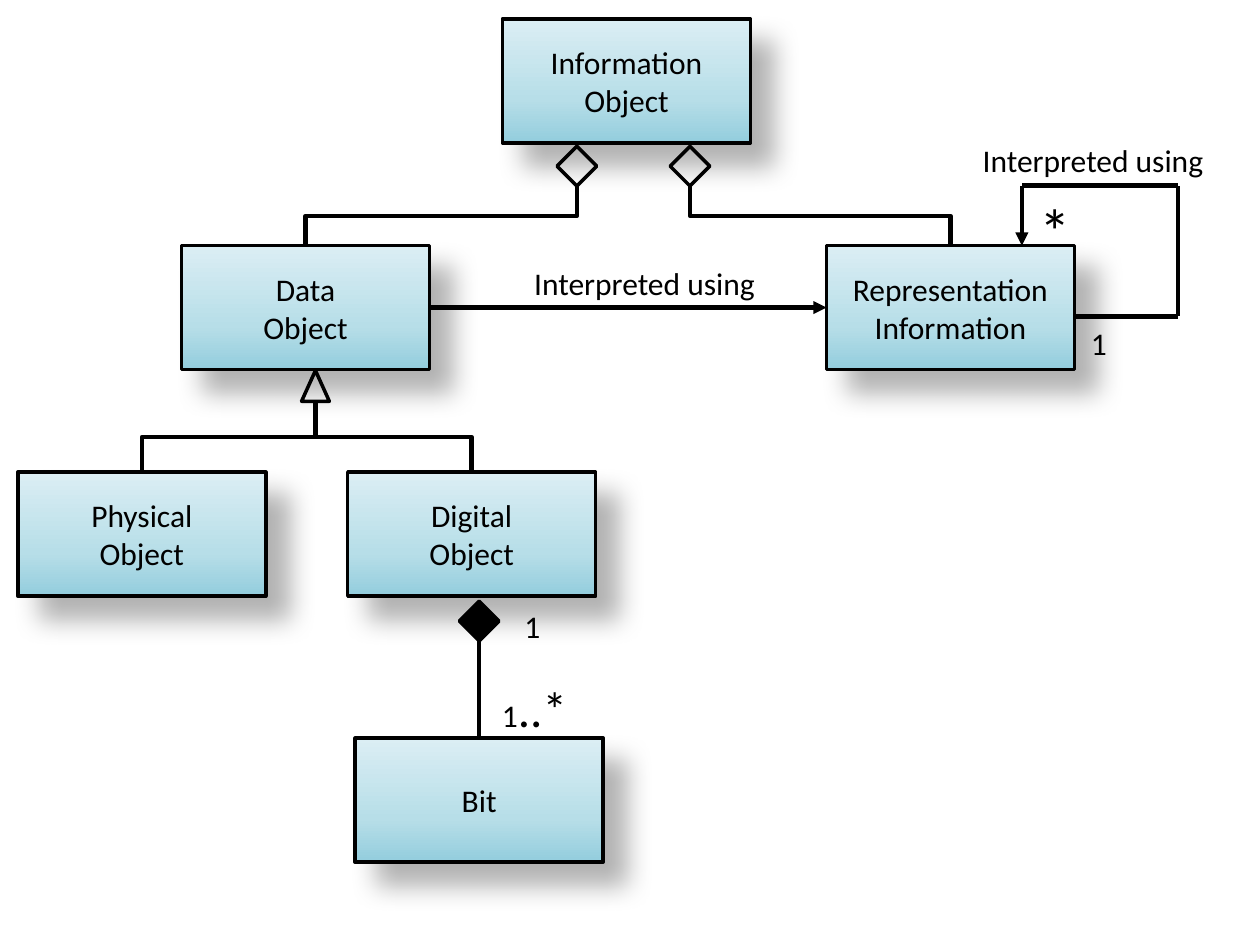
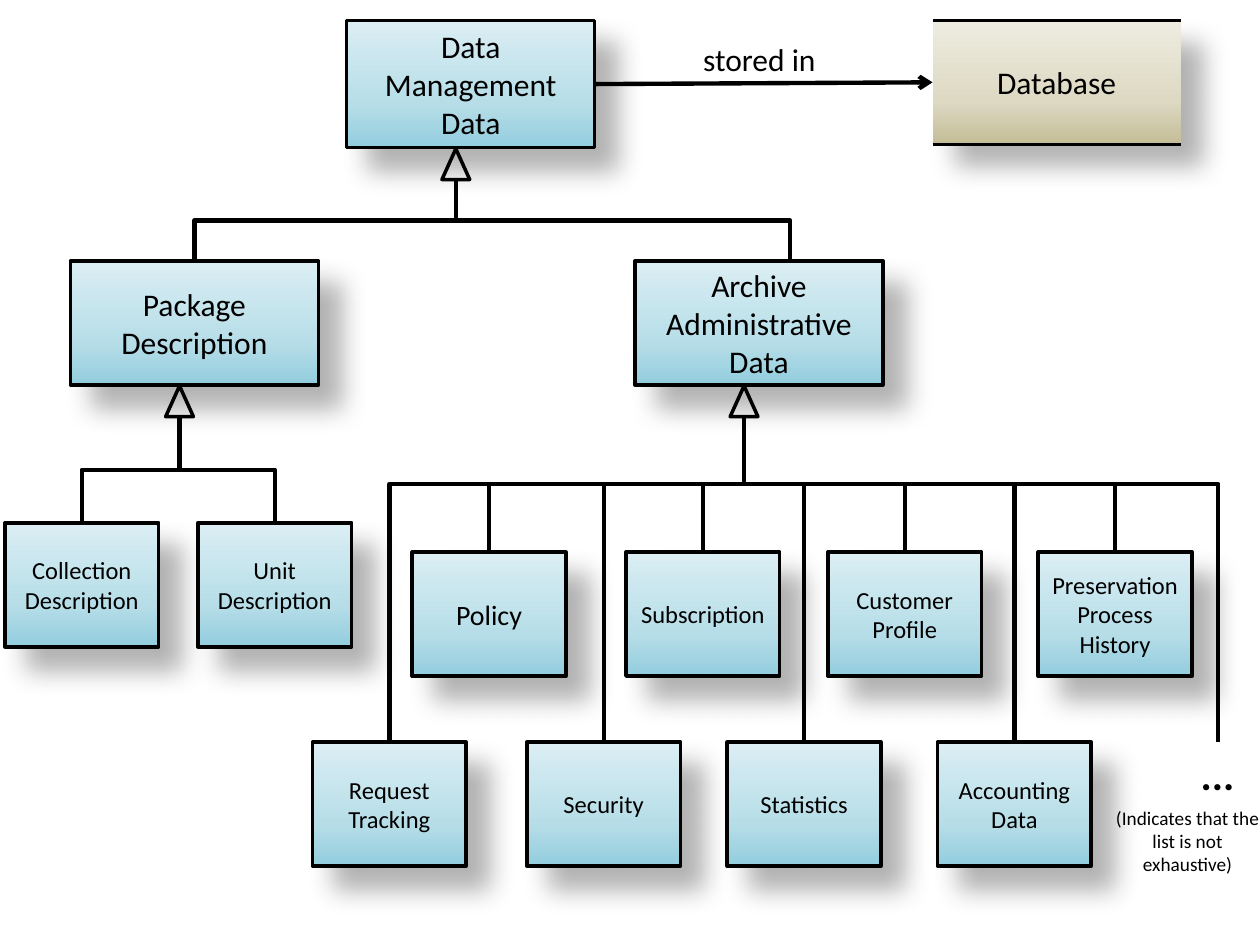
from copy import deepcopy
from dataclasses import dataclass

from pptx import Presentation
from pptx import util as u
from pptx.dml.color import RGBColor
from pptx.enum import shapes, text
from pptx.oxml import parse_xml
from pptx.oxml.ns import nsdecls, qn
from pptx.slide import Slide

COLORS = {
    "ink": "000000",
    "blue_dark": "93CDDD", "blue_mid": "B7DEE8", "blue_light": "DBEEF4",
    "tan_dark": "C4BD97", "tan_mid": "DDD9C3", "tan_light": "EEECE1",
}
FONT = "Calibri"
BOX_W, BOX_H, SMALL_W = 5.0, 2.5, 3.1
DIAMOND = 0.8
TRI_W, TRI_H = 0.56, 0.62
SHADOW = (
    f'<a:outerShdw {nsdecls("a")} blurRad="190500" dist="228600" dir="2700000" '
    'algn="tl" rotWithShape="0"><a:srgbClr val="%s"><a:alpha val="30000"/>'
    "</a:srgbClr></a:outerShdw>" % COLORS["ink"]
)
Point = tuple[float, float]


@dataclass
class Box:
    """A class box; lengths in centimetres."""
    words: str
    x: float
    y: float
    w: float = BOX_W
    h: float = BOX_H
    size: float = 18
    tone: str = "blue"
    outlined: bool = True

    @property
    def top(self) -> Point:
        return self.x + self.w / 2, self.y


@dataclass
class Label:
    """Free text made of (words, size) runs."""
    runs: list[tuple[str, float]]
    x: float
    y: float
    w: float
    h: float = 1.02
    centered: bool = False
    flush: bool = False
    bold: bool = False
    middle: bool = False


def rgb(name: str) -> RGBColor:
    return RGBColor.from_string(COLORS[name])


def set_all(obj, values: dict) -> None:
    for name, value in values.items():
        setattr(obj, name, value)


def set_line(sp, width: float) -> None:
    sp.line.color.rgb = rgb("ink")
    sp.line.width = u.Pt(width)


def add_run(p, words: str, size: float, bold: bool = False) -> None:
    r = p.add_run()
    r.text = words
    set_all(r.font, {"name": FONT, "size": u.Pt(size), "bold": bold})
    r.font.color.rgb = rgb("ink")


# Boxes and labels
def draw_box(s: Slide, box: Box):
    sp = s.shapes.add_shape(shapes.MSO_SHAPE.RECTANGLE,
                            *map(u.Cm, (box.x, box.y, box.w, box.h)))
    # Three-stop gradient, dark at the bottom
    sp.fill.gradient()
    sp.fill.gradient_angle = 90
    stops = sp._element.spPr.find(".//" + qn("a:gsLst"))
    stops.append(deepcopy(stops[-1]))
    shades = ((0, "dark"), (0.35, "mid"), (1, "light"))
    for stop, (position, shade) in zip(sp.fill.gradient_stops, shades):
        stop.position = position
        stop.color.rgb = rgb(f"{box.tone}_{shade}")
    if box.outlined:
        set_line(sp, 2)
    else:
        sp.line.fill.background()
    sp.shadow.inherit = False
    sp._element.spPr.find(qn("a:effectLst")).append(parse_xml(SHADOW))

    tf = sp.text_frame
    set_all(tf, {"word_wrap": True, "vertical_anchor": text.MSO_ANCHOR.MIDDLE})
    for i, words in enumerate(box.words.split("\n")):
        p = tf.add_paragraph() if i else tf.paragraphs[0]
        p.alignment = text.PP_ALIGN.CENTER
        add_run(p, words, box.size)
    return sp


def draw_label(s: Slide, label: Label) -> None:
    sp = s.shapes.add_textbox(*map(u.Cm, (label.x, label.y, label.w, label.h)))
    tf = sp.text_frame
    tf.word_wrap = True
    if label.flush:
        set_all(tf, {"margin_left": 0, "margin_right": 0})
    if label.middle:
        tf.vertical_anchor = text.MSO_ANCHOR.MIDDLE
    p = tf.paragraphs[0]
    p.alignment = text.PP_ALIGN.CENTER if label.centered else text.PP_ALIGN.LEFT
    for words, size in label.runs:
        add_run(p, words, size, label.bold)


# UML end symbols
def draw_symbol(s: Slide, kind, x: float, y: float, w: float, h: float,
                filled: bool = False):
    sp = s.shapes.add_shape(kind, *map(u.Cm, (x, y, w, h)))
    if filled:
        sp.fill.solid()
        sp.fill.fore_color.rgb = rgb("ink")
    else:
        sp.fill.background()
    set_line(sp, 2)
    sp.shadow.inherit = False
    return sp


def draw_diamond(s: Slide, x: float, y: float, filled: bool = False):
    return draw_symbol(s, shapes.MSO_SHAPE.DIAMOND, x, y, DIAMOND, DIAMOND, filled)


def draw_triangle(s: Slide, box: Box, offset: float) -> Point:
    """Put a triangle under the box and return the middle of its base."""
    x, y = box.x + offset, box.y + box.h + 0.02
    draw_symbol(s, shapes.MSO_SHAPE.ISOSCELES_TRIANGLE, x - TRI_W / 2, y, TRI_W, TRI_H)
    return x, y + TRI_H


# Connectors
def add_line(s: Slide, kind, start: Point, end: Point, width: float):
    sp = s.shapes.add_connector(kind, *map(u.Cm, (*start, *end)))
    set_line(sp, width)
    sp._element.spPr.append(parse_xml(f'<a:effectLst {nsdecls("a")}/>'))
    return sp


def draw_line(s: Slide, start: Point, end: Point, arrow: str = "",
              width: float = 2.5):
    sp = add_line(s, shapes.MSO_CONNECTOR.STRAIGHT, start, end, width)
    if arrow:
        sp.line._get_or_add_ln().append(
            parse_xml(f'<a:tailEnd {nsdecls("a")} type="{arrow}"/>'))
    return sp


def join(s: Slide, first, first_site: int, second, second_site: int,
         arrow: str = "") -> None:
    sp = draw_line(s, (0, 0), (1, 1), arrow)
    sp.begin_connect(first, first_site)
    sp.end_connect(second, second_site)


def draw_elbow(s: Slide, start: Point, end: Point, bus: float) -> None:
    """Go down from start, along the bus height, then down to end."""
    (x1, y1), (x2, y2) = start, end
    run, drop = abs(x2 - x1), y2 - y1
    mid_x, mid_y = (x1 + x2) / 2, (y1 + y2) / 2
    sp = add_line(s, shapes.MSO_CONNECTOR.ELBOW,
                  (mid_x - drop / 2, mid_y - run / 2),
                  (mid_x + drop / 2, mid_y + run / 2), 2.5)
    # Turn the connector so that it leaves vertically
    xfrm = sp._element.spPr.find(qn("a:xfrm"))
    if x2 > x1:
        xfrm.set("rot", "16200000")
        xfrm.set("flipH", "1")
    else:
        xfrm.set("rot", "5400000")
    bend = round((bus - y1) / drop * 100000)
    sp._element.spPr.find(".//" + qn("a:avLst")).append(
        parse_xml(f'<a:gd {nsdecls("a")} name="adj1" fmla="val {bend}"/>'))


def draw_tree(s: Slide, parent: Point, children: list[Point], bus: float) -> None:
    for child in children:
        draw_elbow(s, parent, child, bus)


def information_slide(s: Slide) -> None:
    info = Box("Information Object", 10.13, 0.38)
    rep = Box("Representation\nInformation", 16.66, 4.95)
    bit = Box("Bit", 7.16, 14.88)
    digital = Box("Digital\nObject", 7.01, 9.52)
    physical = Box("Physical\nObject", 0.36, 9.52)
    data = Box("Data\nObject", 3.66, 4.95)
    _, rep_sp, bit_sp, _, _, data_sp = [
        draw_box(s, box) for box in (info, rep, bit, digital, physical, data)]

    # Aggregation and composition
    for x, part in ((11.23, data), (13.51, rep)):
        draw_diamond(s, x, 2.95)
        draw_elbow(s, (x + DIAMOND / 2, 2.95 + DIAMOND), part.top, 4.35)
    join(s, draw_diamond(s, 9.26, 12.12, filled=True), 2, bit_sp, 0)

    # Kinds of data object
    base = draw_triangle(s, data, 2.7)
    draw_tree(s, base, [physical.top, digital.top], 8.81)

    # Interpretation, with the loop back to the same box
    join(s, data_sp, 3, rep_sp, 1, "triangle")
    loop = [(21.66, 6.38), (23.75, 6.38), (23.75, 3.74), (20.6, 3.74), (20.6, 4.95)]
    for start, end in zip(loop, loop[1:]):
        draw_line(s, start, end, "triangle" if end == loop[-1] else "")

    for label in (
        Label([("Interpreted using", 18)], 10.52, 5.2, 6.37),
        Label([("Interpreted using", 18)], 19.81, 2.71, 4.5, flush=True),
        Label([("1", 18)], 10.32, 12.12, 0.88),
        Label([("1", 18), ("..*", 28)], 9.87, 13.56, 3.38, 1.45),
        Label([("*", 36)], 20.7, 3.73, 0.88, 1.8),
        Label([("1", 18)], 21.74, 6.4, 0.88),
    ):
        draw_label(s, label)


def management_slide(s: Slide) -> None:
    management = Box("Data\nManagement\nData", 6.99, 0.41, h=2.57)
    package = Box("Package\nDescription", 1.42, 5.26)
    archive = Box("Archive Administrative\nData", 12.8, 5.26)
    database = Box("Database", 18.8, 0.41, tone="tan", outlined=False)

    # Rows of small boxes
    descriptions = [Box(words, x, 10.54, SMALL_W, size=14) for words, x in (
        ("Collection\nDescription", 0.1), ("Unit\nDescription", 3.99))]
    upper = [Box(words, x, 11.13, SMALL_W, size=size) for words, x, size in (
        ("Policy", 8.31, 16), ("Subscription", 12.62, 14),
        ("Customer\nProfile", 16.69, 14),
        ("Preservation\nProcess\nHistory", 20.93, 14))]
    lower = [Box(words, x, 14.96, SMALL_W, size=14) for words, x in (
        ("Request\nTracking", 6.3), ("Security", 10.62),
        ("Statistics", 14.66), ("Accounting\nData", 18.9))]

    management_sp = draw_box(s, management)
    for box in (package, archive, *descriptions, *upper, *lower):
        draw_box(s, box)

    # Inheritance trees; the last archive branch leads to the ellipsis
    for parent, children, bus in (
        (management, [package.top, (15.93, archive.y)], 4.45),
        (package, [box.top for box in descriptions], 9.47),
        (archive, [box.top for box in upper + lower] + [(24.56, 14.96)], 9.76),
    ):
        draw_tree(s, draw_triangle(s, parent, 2.2), children, bus)

    # Database, open at the sides
    database_sp = draw_box(s, database)
    for y in (database.y, database.y + database.h):
        draw_line(s, (database.x, y), (database.x + database.w, y), width=2)
    join(s, management_sp, 3, database_sp, 1, "arrow")

    for label in (
        Label([("...", 24)], 23.77, 14.96, 1.55, 1.27, centered=True, flush=True,
              bold=True, middle=True),
        Label([("(Indicates that the list is not exhaustive)", 11)],
              22.48, 16.13, 2.92, 1.68, centered=True, flush=True),
        Label([("stored in", 18)], 12.73, 0.69, 5.16, centered=True),
    ):
        draw_label(s, label)


def main() -> None:
    prs = Presentation()
    set_all(prs, {"slide_width": u.Cm(25.4), "slide_height": u.Cm(19.05)})
    for build in (information_slide, management_slide):
        build(prs.slides.add_slide(prs.slide_layouts[6]))
    prs.save("out.pptx")


if __name__ == "__main__":
    main()
